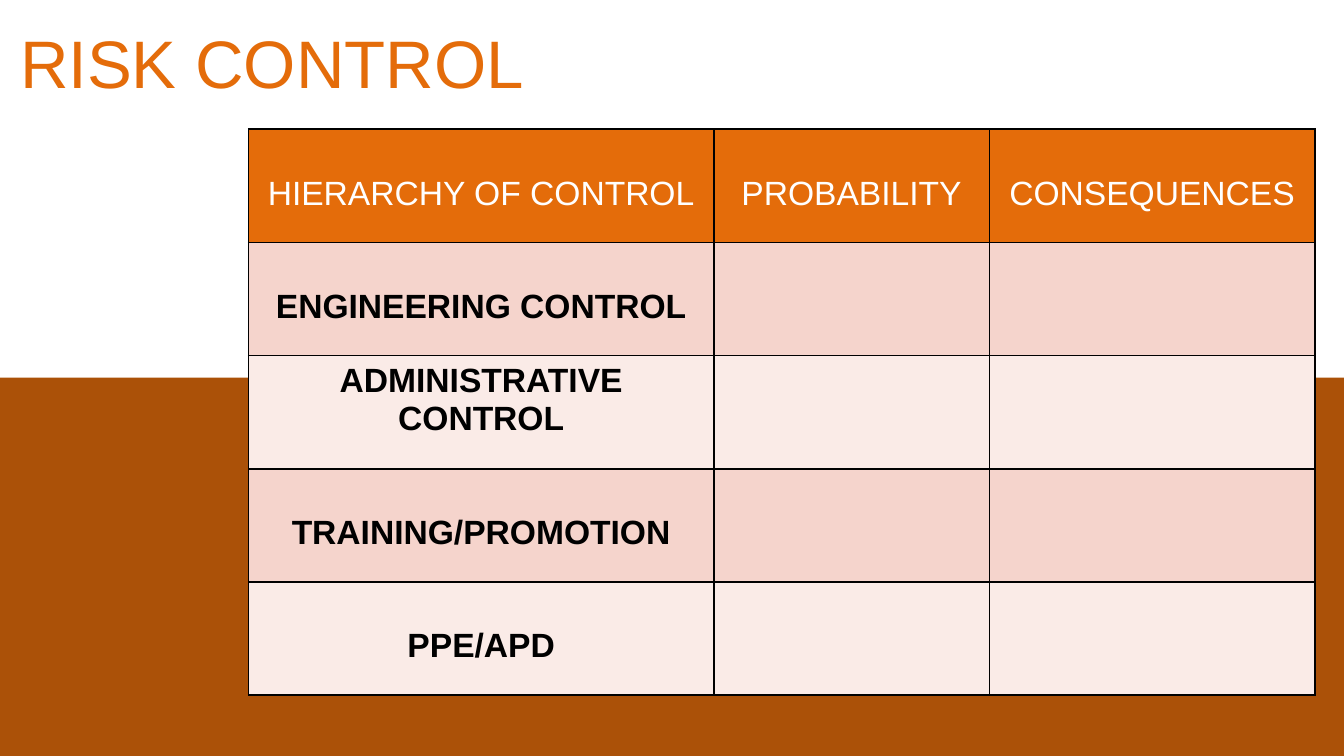
"""Builds the risk control slide with its hierarchy of control table."""
from lxml.etree import SubElement
from pptx import Presentation
from pptx.dml.color import RGBColor
from pptx.enum.shapes import MSO_SHAPE
from pptx.enum.text import MSO_ANCHOR, PP_ALIGN
from pptx.oxml.ns import qn
from pptx.util import Cm, Pt

COLORS = {
    "orange": "E46C0A",
    "brown": "AB5108",
    "rose": "F5D4CC",
    "blush": "FAEBE7",
    "white": "FFFFFF",
    "black": "000000",
}
TITLE = {"name": "Arial", "size": Pt(36), "bold": False}
HEADING = {"name": "Arial", "size": Pt(18), "bold": False}
CONTROL = {"name": "Arial", "size": Pt(18), "bold": True}
HEADINGS = ["HIERARCHY OF CONTROL", "PROBABILITY", "CONSEQUENCES"]
CONTROLS = [
    ["ENGINEERING CONTROL"],
    ["ADMINISTRATIVE", "CONTROL"],
    ["TRAINING/PROMOTION"],
    ["PPE/APD"],
]
COLUMN_WIDTHS = [8.79, 5.21, 6.15]
ROW_HEIGHT = 2.14


def color(name):
    return RGBColor.from_string(COLORS[name])


def write(para, text, formats, color_name):
    span = para.add_run()
    span.text = text
    for attribute, value in formats.items():
        setattr(span.font, attribute, value)
    span.font.color.rgb = color(color_name)


def add_band(page):
    band = page.shapes.add_shape(
        MSO_SHAPE.RECTANGLE, Cm(0), Cm(7.14), Cm(25.4), Cm(7.15))
    band.shadow.inherit = False
    band.fill.solid()
    band.fill.fore_color.rgb = color("brown")
    band.line.fill.background()


def add_title(page, text):
    box = page.shapes.add_textbox(Cm(0.13), Cm(0.36), Cm(20.14), Cm(1.6))
    box.text_frame.word_wrap = True
    box.text_frame.vertical_anchor = MSO_ANCHOR.MIDDLE
    write(box.text_frame.paragraphs[0], text, TITLE, "orange")


def add_borders(cell):
    properties = cell._tc.get_or_add_tcPr()
    for index, side in enumerate(["lnL", "lnR", "lnT", "lnB"]):
        line = properties.makeelement(qn(f"a:{side}"), {"w": str(Pt(1))})
        fill = SubElement(line, qn("a:solidFill"))
        SubElement(fill, qn("a:srgbClr"), val=COLORS["black"])
        properties.insert(index, line)


def fill_cell(cell, lines, formats, text_color, fill_color):
    cell.fill.solid()
    cell.fill.fore_color.rgb = color(fill_color)
    add_borders(cell)
    cell.margin_top = Cm(0.13 if len(lines) > 1 else 0.86)
    frame = cell.text_frame
    for index, text in enumerate(lines):
        para = frame.add_paragraph() if index else frame.paragraphs[0]
        para.alignment = PP_ALIGN.CENTER
        write(para, text, formats, text_color)


def add_control_table(page):
    row_count = len(CONTROLS) + 1
    table = page.shapes.add_table(
        row_count, len(HEADINGS), Cm(4.7), Cm(2.44),
        Cm(sum(COLUMN_WIDTHS)), Cm(ROW_HEIGHT * row_count)).table
    for column, width in zip(table.columns, COLUMN_WIDTHS):
        column.width = Cm(width)
    for row in table.rows:
        row.height = Cm(ROW_HEIGHT)
    for column, heading in enumerate(HEADINGS):
        fill_cell(table.cell(0, column), [heading], HEADING, "white", "orange")
    for row, control in enumerate(CONTROLS, 1):
        shade = "rose" if row % 2 else "blush"
        for column in range(len(HEADINGS)):
            lines = [] if column else control
            fill_cell(table.cell(row, column), lines, CONTROL, "black", shade)


def main():
    deck = Presentation()
    deck.slide_width, deck.slide_height = Cm(25.4), Cm(14.29)
    page = deck.slides.add_slide(deck.slide_layouts[6])
    add_band(page)
    add_title(page, "RISK CONTROL")
    add_control_table(page)
    deck.save("out.pptx")


if __name__ == "__main__":
    main()
